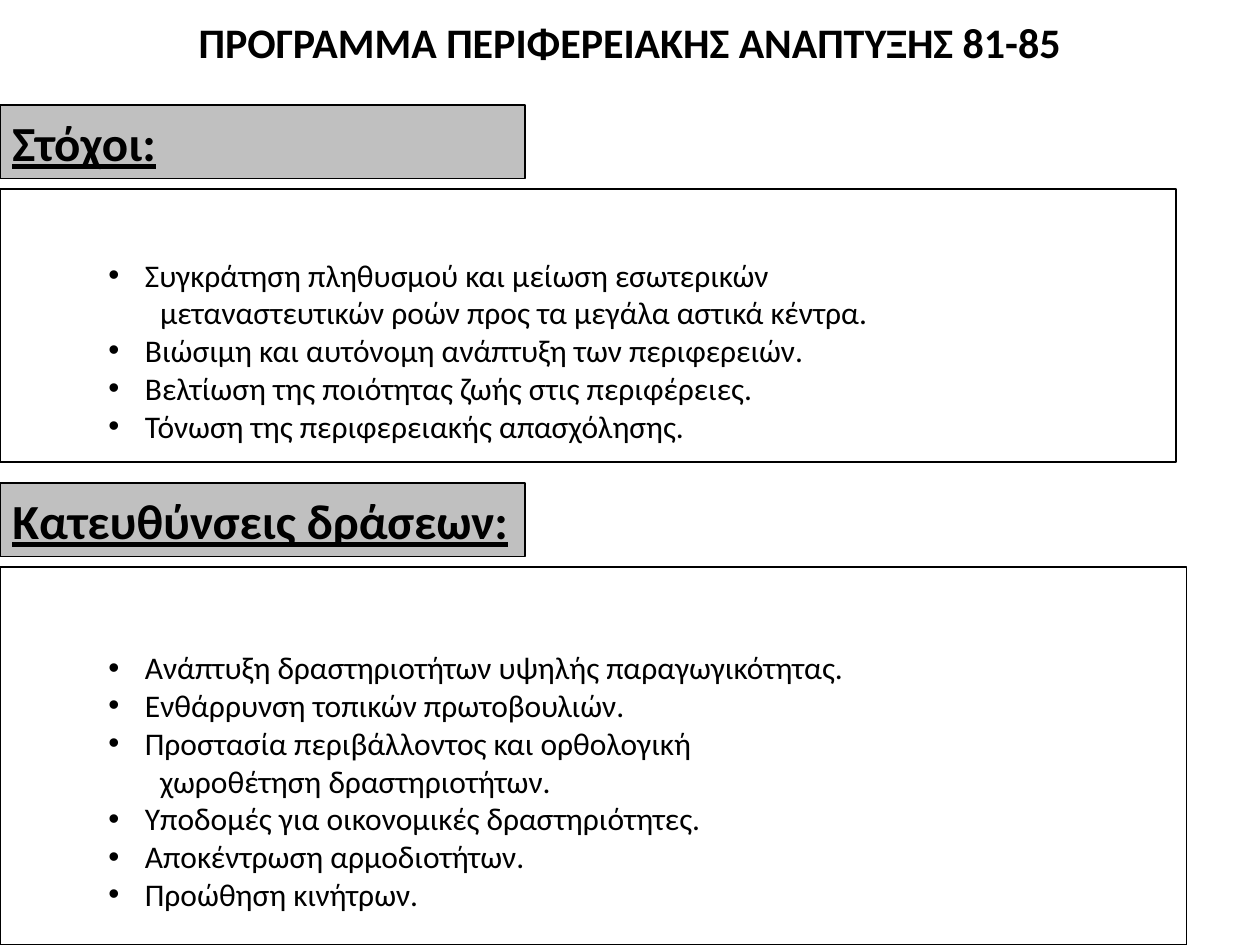
from lxml import etree
from pptx import Presentation
from pptx.dml.color import RGBColor
from pptx.enum.shapes import MSO_SHAPE
from pptx.enum.text import MSO_ANCHOR, MSO_AUTO_SIZE, PP_ALIGN
from pptx.oxml.ns import qn
from pptx.util import Inches, Pt

RECTANGLE = MSO_SHAPE.RECTANGLE
MIDDLE = MSO_ANCHOR.MIDDLE
NO_AUTOFIT = MSO_AUTO_SIZE.NONE
LEFT, CENTER = PP_ALIGN.LEFT, PP_ALIGN.CENTER

COLORS = {"text": "000000", "line": "000000", "heading": "C0C0C0"}
FONT = "Calibri"
WIDTH, HEIGHT = Inches(10), Inches(7.5)
COLUMN, ROW = WIDTH / 120, HEIGHT / 90
TWO_CONTENT_LAYOUT = 3
BULLET_LEVEL = 2
TEXT_INDENT, HANGING, CONTINUATION_INDENT = 1.05, 0.29, 1.17
LIST_TOP_INSET = 0.44

TITLE = "ΠΡΟΓΡΑΜΜΑ ΠΕΡΙΦΕΡΕΙΑΚΗΣ ΑΝΑΠΤΥΞΗΣ 81-85"
SECTIONS = [
    {
        "heading": "Στόχοι:",
        "row": 10,
        "columns": 112,
        "rows": 26,
        "items": [
            ("Συγκράτηση πληθυσμού και μείωση εσωτερικών",
             "μεταναστευτικών ροών προς τα μεγάλα αστικά κέντρα."),
            ("Βιώσιμη και αυτόνομη ανάπτυξη των περιφερειών.",),
            ("Βελτίωση της ποιότητας ζωής στις περιφέρειες.",),
            ("Τόνωση της περιφερειακής απασχόλησης.",),
        ],
    },
    {
        "heading": "Κατευθύνσεις δράσεων:",
        "row": 46,
        "columns": 113,
        "rows": 36,
        "items": [
            ("Ανάπτυξη δραστηριοτήτων υψηλής παραγωγικότητας.",),
            ("Ενθάρρυνση τοπικών πρωτοβουλιών.",),
            ("Προστασία περιβάλλοντος και ορθολογική",
             "χωροθέτηση δραστηριοτήτων."),
            ("Υποδομές για οικονομικές δραστηριότητες.",),
            ("Αποκέντρωση αρμοδιοτήτων.",),
            ("Προώθηση κινήτρων.",),
        ],
    },
]


def color(name):
    """Return the named colour."""
    return RGBColor.from_string(COLORS[name])


def grid(column, row, columns, rows):
    """Convert grid cells to left, top, width and height."""
    return (round(column * COLUMN), round(row * ROW),
            round(columns * COLUMN), round(rows * ROW))


def place(shape, box):
    """Move and resize a shape."""
    shape.left, shape.top, shape.width, shape.height = box


def outline(shape):
    """Give a shape a thin outline."""
    shape.line.color.rgb = color("line")
    shape.line.width = Pt(0.75)


def format_frame(text_frame, wrap=True):
    """Centre text vertically at a fixed size."""
    text_frame.auto_size = NO_AUTOFIT
    text_frame.word_wrap = wrap
    text_frame.vertical_anchor = MIDDLE


def format_runs(paragraph, size, bold=False, underline=False):
    """Format every run of a paragraph."""
    for run in paragraph.runs:
        font = run.font
        font.name, font.size = FONT, Pt(size)
        font.bold, font.underline = bold, underline
        font.color.rgb = color("text")


def set_bullet(paragraph, bulleted):
    """Set the indent and the bullet of a list line."""
    properties = paragraph._p.get_or_add_pPr()
    margin = TEXT_INDENT if bulleted else CONTINUATION_INDENT
    properties.set("marL", str(Inches(margin)))
    properties.set("indent", str(Inches(-HANGING if bulleted else 0)))
    if bulleted:
        etree.SubElement(properties, qn("a:buFont"), typeface="Arial")
        etree.SubElement(properties, qn("a:buChar"), char="•")
    else:
        etree.SubElement(properties, qn("a:buNone"))


def add_title(slide):
    """Fill the title placeholder."""
    title = slide.shapes.title
    place(title, grid(9, 0, 102, 8))
    title.text_frame.text = TITLE
    format_frame(title.text_frame)
    paragraph = title.text_frame.paragraphs[0]
    paragraph.alignment = CENTER
    format_runs(paragraph, 24, bold=True)


def add_heading(slide, text, row):
    """Add a grey section heading."""
    shape = slide.shapes.add_shape(RECTANGLE, *grid(0, row, 50, 7))
    shape.shadow.inherit = False
    shape.fill.solid()
    shape.fill.fore_color.rgb = color("heading")
    outline(shape)
    shape.text_frame.text = text
    format_frame(shape.text_frame, wrap=False)
    paragraph = shape.text_frame.paragraphs[0]
    paragraph.alignment = LEFT
    format_runs(paragraph, 28, bold=True, underline=True)


def fill_list(placeholder, items, box):
    """Fill a framed body placeholder with bulleted items."""
    place(placeholder, box)
    outline(placeholder)
    text_frame = placeholder.text_frame
    text_frame.text = "\n".join(line for item in items for line in item)
    format_frame(text_frame)
    text_frame.margin_top = Inches(LIST_TOP_INSET)
    bullets = [index == 0 for item in items for index in range(len(item))]
    for paragraph, bulleted in zip(text_frame.paragraphs, bullets):
        paragraph.level = BULLET_LEVEL
        paragraph.space_before = Pt(0)
        set_bullet(paragraph, bulleted)
        format_runs(paragraph, 18)


def main():
    """Build and save the slide."""
    presentation = Presentation()
    presentation.slide_width, presentation.slide_height = WIDTH, HEIGHT
    layout = presentation.slide_layouts[TWO_CONTENT_LAYOUT]
    slide = presentation.slides.add_slide(layout)
    add_title(slide)
    for index, section in enumerate(SECTIONS, start=1):
        add_heading(slide, section["heading"], section["row"])
        box = grid(0, section["row"] + 8, section["columns"], section["rows"])
        fill_list(slide.placeholders[index], section["items"], box)
    presentation.save("out.pptx")


if __name__ == "__main__":
    main()
